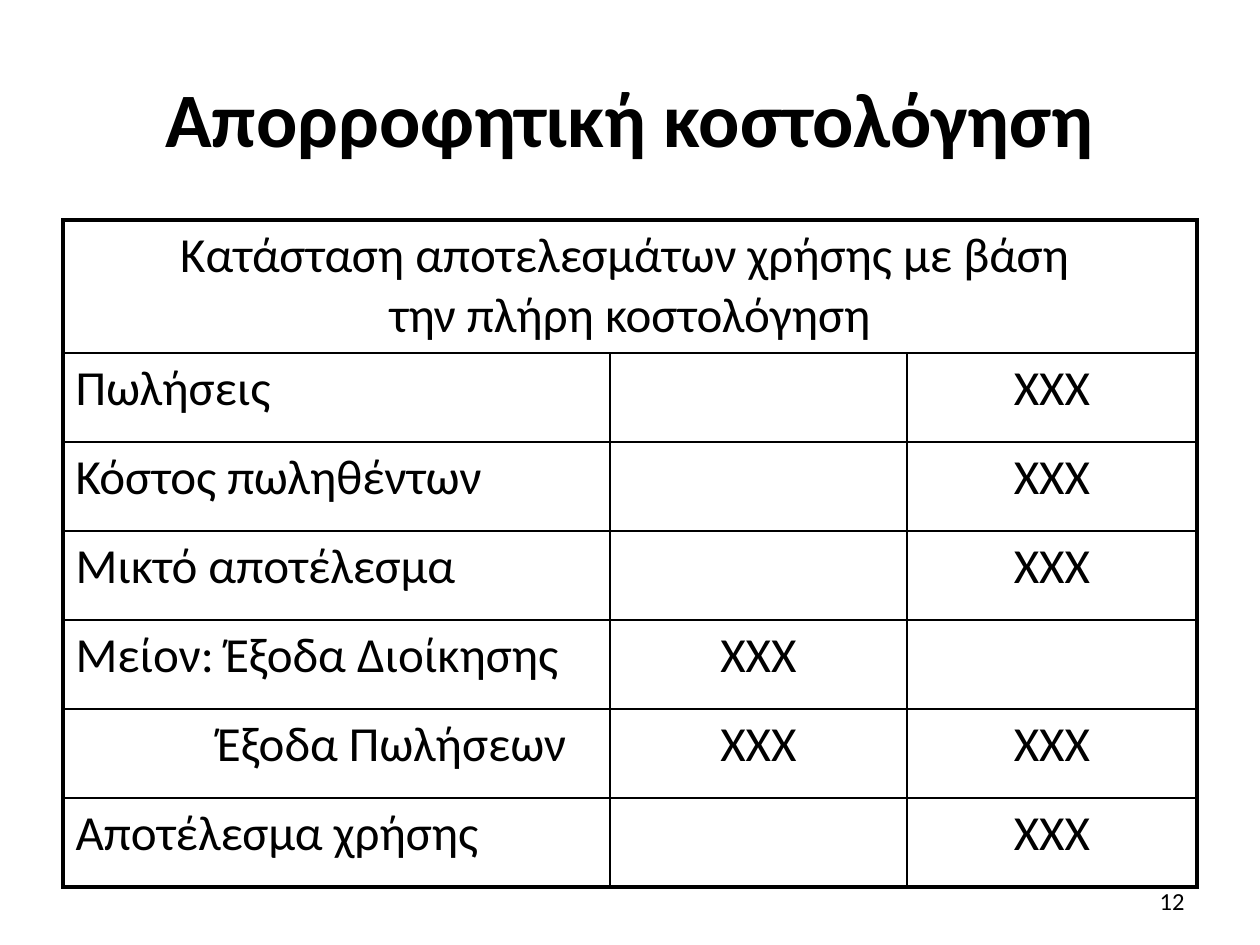
from lxml.etree import SubElement
from pptx import Presentation
from pptx.dml.color import RGBColor
from pptx.enum.text import MSO_ANCHOR, PP_ALIGN
from pptx.oxml.ns import qn
from pptx.util import Emu, Pt

BLACK = RGBColor(0, 0, 0)
WHITE = RGBColor(255, 255, 255)
FONT = "Calibri"
PX = 914400 / 126

TITLE = "Απορροφητική κοστολόγηση"
PAGE_NUMBER = "12"
HEADING = "Κατάσταση αποτελεσμάτων χρήσης με βάση \vτην πλήρη κοστολόγηση"
ROWS = [
    (HEADING, "", ""),
    ("Πωλήσεις", "", "ΧΧΧ"),
    ("Κόστος πωληθέντων", "", "ΧΧΧ"),
    ("Μικτό αποτέλεσμα", "", "ΧΧΧ"),
    ("Μείον: Έξοδα Διοίκησης", "ΧΧΧ", ""),
    ("Έξοδα Πωλήσεων", "ΧΧΧ", "ΧΧΧ"),
    ("Αποτέλεσμα χρήσης", "", "ΧΧΧ"),
]
INDENTED_ROW = 5
INDENT = 154
COLUMN_WIDTHS = [547, 297, 290]
ROW_HEIGHTS = [133] + [89] * (len(ROWS) - 1)
THIN, THICK = 1, 2.25


def px(value):
    return Emu(round(value * PX))


def format_text(frame, size, align, bold=False):
    for para in frame.paragraphs:
        para.alignment = align
        para.font.size = Pt(size)
        for span in para.runs:
            span.font.name = FONT
            span.font.size = Pt(size)
            span.font.bold = bold
            span.font.color.rgb = BLACK


def add_text(page, text, area, size, align, bold=False):
    box = page.shapes.add_textbox(*map(px, area))
    frame = box.text_frame
    frame.word_wrap = True
    frame.vertical_anchor = MSO_ANCHOR.MIDDLE
    frame.text = text
    format_text(frame, size, align, bold)


def set_borders(cell, outer_sides):
    properties = cell._tc.get_or_add_tcPr()
    for side, outer in zip("LRTB", outer_sides):
        width = Pt(THICK if outer else THIN)
        line = SubElement(properties, qn(f"a:ln{side}"), w=str(width))
        fill = SubElement(line, qn("a:solidFill"))
        SubElement(fill, qn("a:srgbClr"), val=str(BLACK))


def add_statement(page):
    area = (63, 220, sum(COLUMN_WIDTHS), sum(ROW_HEIGHTS))
    table = page.shapes.add_table(len(ROWS), len(COLUMN_WIDTHS), *map(px, area)).table
    table.first_row = False
    table.horz_banding = False
    for column, width in zip(table.columns, COLUMN_WIDTHS):
        column.width = px(width)
    for row, height in zip(table.rows, ROW_HEIGHTS):
        row.height = px(height)
    last_row, last_column = len(ROWS) - 1, len(COLUMN_WIDTHS) - 1
    table.cell(0, 0).merge(table.cell(0, last_column))
    for r, texts in enumerate(ROWS):
        for c, text in enumerate(texts):
            cell = table.cell(r, c)
            heading = r == 0
            set_borders(cell, (heading or c == 0, heading or c == last_column,
                               heading, r == last_row))
            cell.fill.solid()
            cell.fill.fore_color.rgb = WHITE
            cell.text_frame.paragraphs[0].text = text
            left = c == 0 and not heading
            format_text(cell.text_frame, 28, PP_ALIGN.LEFT if left else PP_ALIGN.CENTER)
    table.cell(INDENTED_ROW, 0).margin_left = px(INDENT)


def main():
    deck = Presentation()
    deck.slide_width, deck.slide_height = px(1260), px(945)
    page = deck.slides.add_slide(deck.slide_layouts[6])
    add_text(page, PAGE_NUMBER, (903, 876, 294, 50), 14, PP_ALIGN.RIGHT)
    add_text(page, TITLE, (63, 38, 1134, 157), 44, PP_ALIGN.CENTER, True)
    add_statement(page)
    deck.save("out.pptx")


if __name__ == "__main__":
    main()
